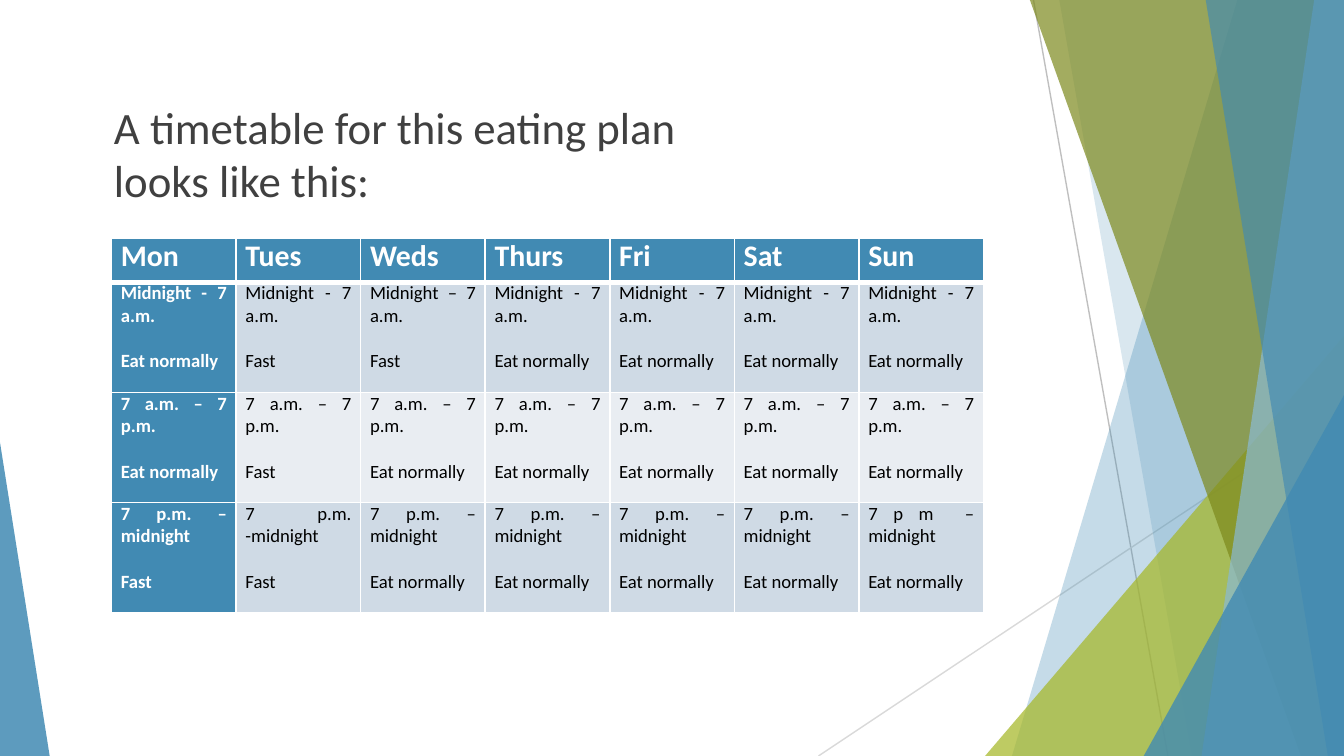
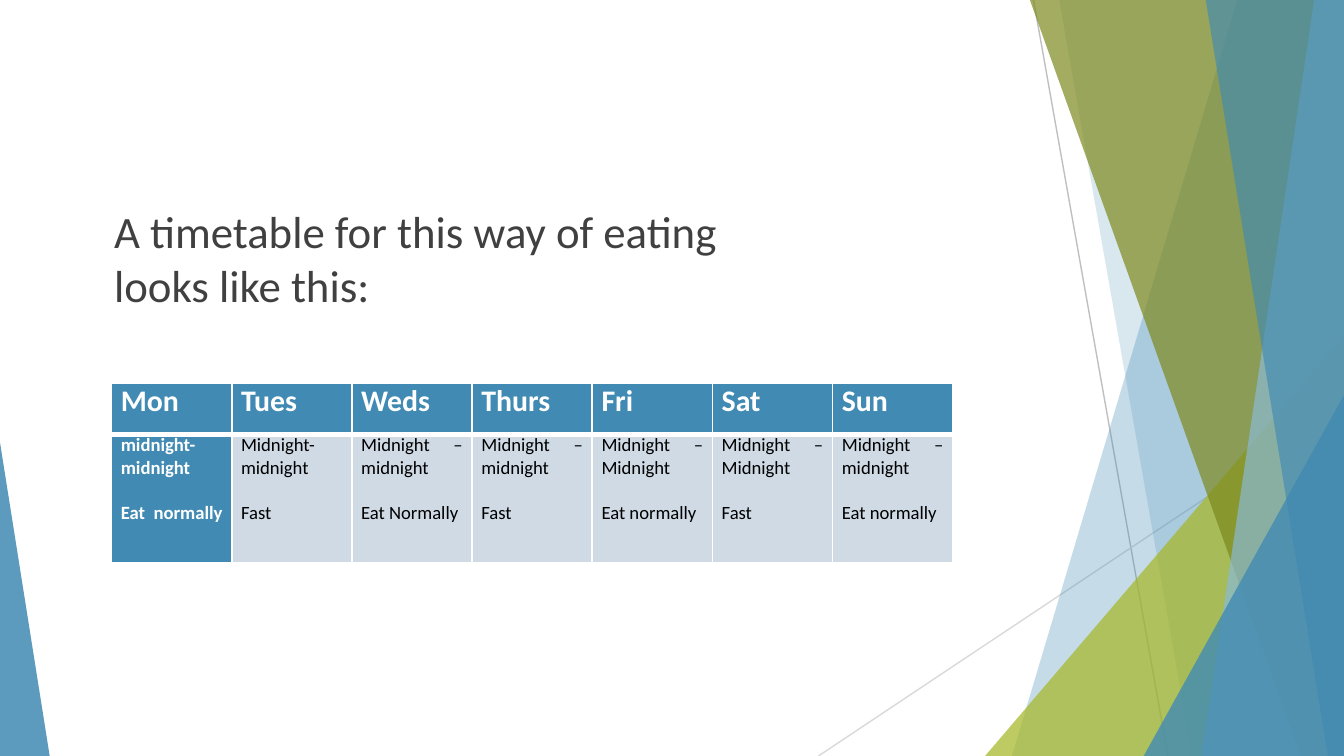
"""Build two slides with weekly fasting timetables over a shared faceted backdrop."""
from dataclasses import dataclass

from lxml import etree
from pptx import Presentation
from pptx.dml.color import RGBColor
from pptx.enum import shapes, text
from pptx.oxml import ns
from pptx.util import Inches, Pt


@dataclass(frozen=True)
class Theme:
    font: str = "Calibri"
    blue: str = "418AB3"
    sky: str = "8ABAD4"
    lime: str = "A6B727"
    olive: str = "7D891D"
    white: str = "FFFFFF"
    ink: str = "000000"
    title: str = "404040"
    bands: tuple = ("CFDAE5", "E9EDF2")
    line_dark: str = "BFBFBF"
    line_light: str = "D9D9D9"
    title_size: float = 24
    day_size: float = 16
    slot_size: float = 10
    slot_gap: float = 12.2
    title_gap: float = 7.5
    hairline: float = 0.75
    border: float = 1
    header_border: float = 3


THEME = Theme()
WIDTH = 10
HEIGHT = WIDTH * 9 / 16
TABLE_LEFT, CELL_INSET = 0.83, 0.07

DAYS = ["Mon ", "Tues ", "Weds", "Thurs", "Fri", "Sat", "Sun"]
EAT, FAST = "Eat normally", "Fast"
NIGHT, DAY, EVENING = "Midnight - 7 a.m. ", "7 a.m. – 7 p.m.", "7 p.m. – midnight"
ALL_DAY, ALL_DAY_CAPITAL = "Midnight – midnight", "Midnight – Midnight"

TIMETABLES = [
    {
        "title": "A timetable for this eating plan looks like this:",
        "title_box": (0.75, 0.69, 4.57, 1.1),
        "top": 1.77, "width": 6.49, "header_height": 0.33, "slot_height": 0.82,
        "slots": [
            [(NIGHT, EAT + " "), ("Midnight - 7 a.m.", FAST),
             ("Midnight – 7 a.m.", FAST)] + [(NIGHT, EAT)] * 4,
            [(DAY, EAT), (DAY, FAST)] + [(DAY, EAT)] * 5,
            [(EVENING, FAST), ("7 p.m. -midnight", FAST)] + [(EVENING, EAT)] * 4
            + [("7 p m  – midnight", EAT)],
        ],
    },
    {
        "title": "A timetable for this way of eating looks like this:",
        "title_box": (0.75, 1.47, 4.72, 1.1),
        "top": 2.85, "width": 6.26, "header_height": 0.38, "slot_height": 0.96,
        "slots": [
            [("midnight-midnight ", EAT + " "), ("Midnight-midnight", FAST),
             (ALL_DAY, "Eat Normally"), (ALL_DAY, FAST), (ALL_DAY_CAPITAL, EAT),
             (ALL_DAY_CAPITAL, FAST), (ALL_DAY, EAT)],
        ],
    },
]

RAYS = [
    ((7.69, 0, 8.69, HEIGHT), THEME.line_dark),
    ((10, 3.02, 6.09, HEIGHT), THEME.line_light),
]
FACETS = [
    ("beam", (9.21, 7.53), THEME.blue, 30),
    ("beam", (7.88, 8.87), THEME.blue, 20),
    ("corner", (7.33, 2.5, 2.67, 1), THEME.lime, 72),
    ("beam", (7.66, 9.68), THEME.olive, 70),
    ("beam", (9.78, 8.94), THEME.sky, 70),
    ("beam", (8.97, 9.88), THEME.blue, 65),
    ("corner", (8.51, 2.94, 1.49, 1), THEME.blue, 80),
    ("corner", (0, 3.29, 0.37, 0), THEME.blue, 85),
]


def rgb(color):
    return RGBColor.from_string(color)


def add_beam(slide, top_x, bottom_x):
    top = -0.01
    corners = [(WIDTH, top), (WIDTH, HEIGHT), (bottom_x, HEIGHT)]
    builder = slide.shapes.build_freeform(Inches(top_x), Inches(top))
    builder.add_line_segments([(Inches(x), Inches(y)) for x, y in corners], close=True)
    return builder.convert_to_shape()


def add_corner(slide, left, top, width, apex):
    corner = slide.shapes.add_shape(
        shapes.MSO_SHAPE.ISOSCELES_TRIANGLE,
        Inches(left), Inches(top), Inches(width), Inches(HEIGHT - top))
    corner.adjustments[0] = apex
    return corner


def add_backdrop(slide):
    for ends, color in RAYS:
        ray = slide.shapes.add_connector(
            shapes.MSO_CONNECTOR.STRAIGHT, *map(Inches, ends))
        ray.line.color.rgb = rgb(color)
        ray.line.width = Pt(THEME.hairline)
        etree.SubElement(ray._element.spPr, ns.qn("a:effectLst"))
    makers = {"beam": add_beam, "corner": add_corner}
    for kind, geometry, color, opacity in FACETS:
        facet = makers[kind](slide, *geometry)
        facet.shadow.inherit = False
        facet.line.fill.background()
        facet.fill.solid()
        facet.fill.fore_color.rgb = rgb(color)
        tint = facet._element.spPr.find(".//" + ns.qn("a:srgbClr"))
        etree.SubElement(tint, ns.qn("a:alpha"), val=str(opacity * 1000))


def add_run(paragraph, words, size, color, bold=False):
    run = paragraph.add_run()
    run.text = words
    run.font.name = THEME.font
    run.font.size = Pt(size)
    run.font.bold = bold
    run.font.color.rgb = rgb(color)


def add_title(slide, words, box):
    frame = slide.shapes.add_textbox(*map(Inches, box)).text_frame
    frame.word_wrap = True
    heading = frame.paragraphs[0]
    heading.space_before = Pt(THEME.title_gap)
    add_run(heading, words, THEME.title_size, THEME.title)


def set_borders(cell, bottom):
    properties = cell._tc.get_or_add_tcPr()
    for side in "LRTB":
        width = bottom if side == "B" else THEME.border
        edge = etree.SubElement(properties, ns.qn("a:ln" + side), w=str(Pt(width)))
        paint = etree.SubElement(edge, ns.qn("a:solidFill"))
        etree.SubElement(paint, ns.qn("a:srgbClr"), val=THEME.white)


def fill_cell(cell, lines, size, fill, strong, bottom):
    set_borders(cell, bottom)
    cell.fill.solid()
    cell.fill.fore_color.rgb = rgb(fill)
    cell.margin_left = cell.margin_right = Inches(CELL_INSET)
    cell.margin_top = cell.margin_bottom = 0
    frame = cell.text_frame
    for index, words in enumerate(lines):
        paragraph = frame.add_paragraph() if index else frame.paragraphs[0]
        paragraph.alignment = text.PP_ALIGN.JUSTIFY
        if index:
            paragraph.space_before = Pt(THEME.slot_gap)
        add_run(paragraph, words, size, THEME.white if strong else THEME.ink, strong)


def add_timetable(slide, plan):
    slots = plan["slots"]
    heights = [plan["header_height"]] + [plan["slot_height"]] * len(slots)
    table = slide.shapes.add_table(
        len(heights), len(DAYS), Inches(TABLE_LEFT), Inches(plan["top"]),
        Inches(plan["width"]), Inches(sum(heights))).table
    table.first_col = True
    for row, height in zip(table.rows, heights):
        row.height = Inches(height)
    for column, day in enumerate(DAYS):
        table.columns[column].width = Inches(plan["width"] / len(DAYS))
        fill_cell(table.cell(0, column), [day], THEME.day_size, THEME.blue,
                  True, THEME.header_border)
        for index, slot in enumerate(slots):
            strong = column == 0
            fill = THEME.blue if strong else THEME.bands[index % 2]
            fill_cell(table.cell(index + 1, column), slot[column], THEME.slot_size,
                      fill, strong, THEME.border)


def main():
    deck = Presentation()
    deck.slide_width, deck.slide_height = Inches(WIDTH), Inches(HEIGHT)
    for plan in TIMETABLES:
        slide = deck.slides.add_slide(deck.slide_layouts[6])
        slide.background.fill.solid()
        slide.background.fill.fore_color.rgb = rgb(THEME.white)
        add_backdrop(slide)
        add_title(slide, plan["title"], plan["title_box"])
        add_timetable(slide, plan)
    deck.save("out.pptx")


if __name__ == "__main__":
    main()
